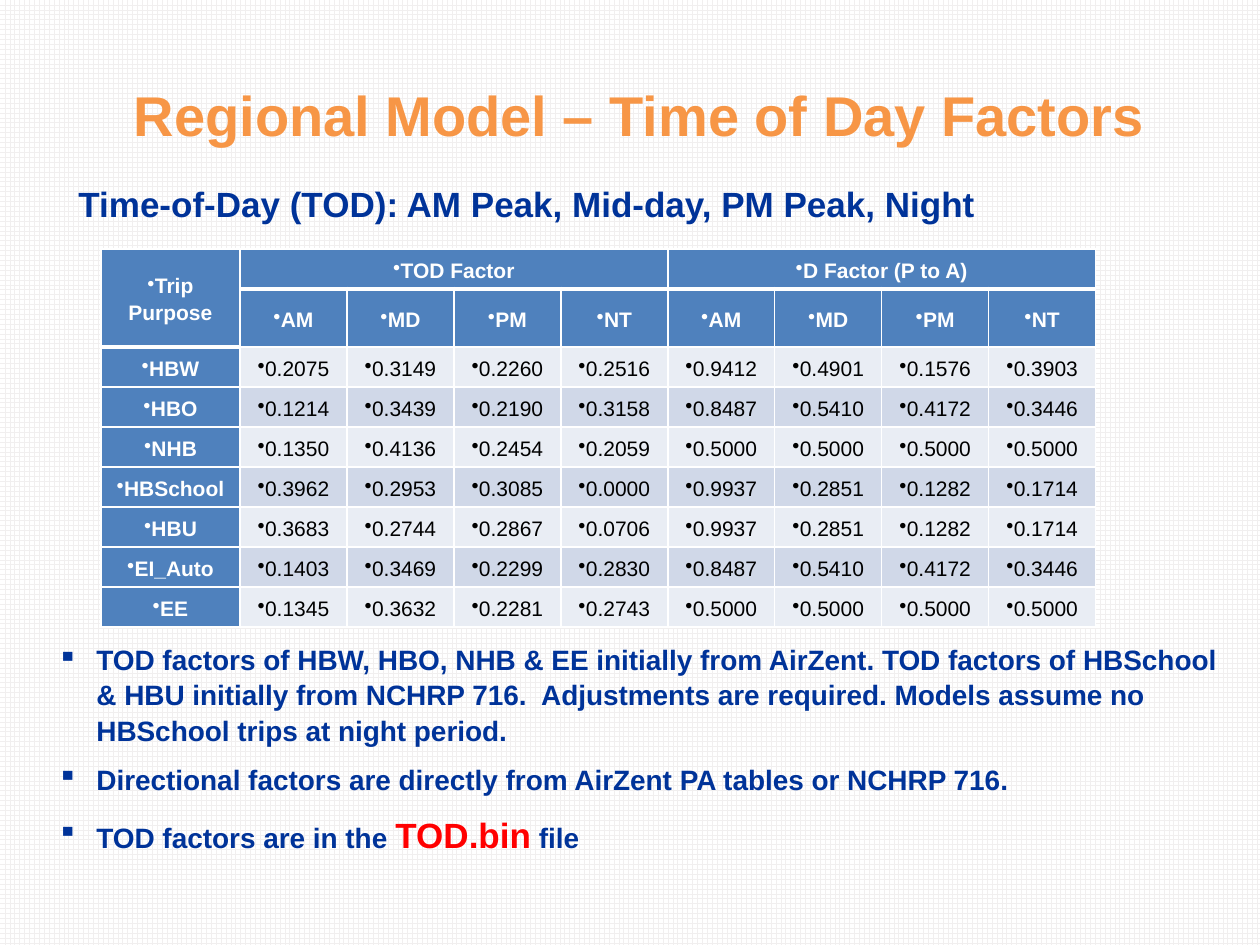
"""Builds the slide of time-of-day factors for the regional model."""
import pptx
import pptx.dml.color
import pptx.enum.dml
import pptx.enum.text
import pptx.oxml
import pptx.oxml.ns
import pptx.util

TITLE = "Regional Model – Time of Day Factors"
PERIODS = "Time-of-Day (TOD): AM Peak, Mid-day, PM Peak, Night"
GROUPS = ["TOD Factor", "D Factor (P to A)"]
TIMES = ["AM", "MD", "PM", "NT"]
FACTORS = [
    ("HBW", "0.2075", "0.3149", "0.2260", "0.2516", "0.9412", "0.4901", "0.1576", "0.3903"),
    ("HBO", "0.1214", "0.3439", "0.2190", "0.3158", "0.8487", "0.5410", "0.4172", "0.3446"),
    ("NHB", "0.1350", "0.4136", "0.2454", "0.2059", "0.5000", "0.5000", "0.5000", "0.5000"),
    ("HBSchool", "0.3962", "0.2953", "0.3085", "0.0000", "0.9937", "0.2851", "0.1282", "0.1714"),
    ("HBU", "0.3683", "0.2744", "0.2867", "0.0706", "0.9937", "0.2851", "0.1282", "0.1714"),
    ("EI_Auto", "0.1403", "0.3469", "0.2299", "0.2830", "0.8487", "0.5410", "0.4172", "0.3446"),
    ("EE", "0.1345", "0.3632", "0.2281", "0.2743", "0.5000", "0.5000", "0.5000", "0.5000"),
]
NOTES = [
    (0, [("TOD factors of HBW, HBO, NHB & EE initially from AirZent. TOD factors of "
          "HBSchool & HBU initially from NCHRP 716.  Adjustments are required. Models "
          "assume no HBSchool trips at night period.", False)]),
    (8, [("Directional factors are directly from AirZent PA tables or NCHRP 716.", False)]),
    (9, [("TOD factors are in the ", False), ("TOD.bin", True), (" file", False)]),
]
COLORS = {"title": "F79646", "body": "003399", "file": "FF0000", "head": "4F81BD",
          "odd": "E9EDF4", "even": "D0D8E8", "white": "FFFFFF", "black": "000000",
          "grid": "F1EFEF"}
FONT = "Arial"
COLS = [139] + [107] * 8
ROWS = [40, 57] + [40] * 7
Pt = pptx.util.Pt


def px(n):
    return round(n * 914400 / 126)


def color(name):
    return pptx.dml.color.RGBColor.from_string(COLORS[name])


def style(font, size, name, bold=True):
    font.name, font.size, font.bold = FONT, Pt(size), bold
    font.color.rgb = color(name)


def bullet(para, char, indent=0):
    props = para._p.get_or_add_pPr()
    props.set("marL", str(px(indent)))
    props.set("indent", str(-px(indent)))
    mark = pptx.oxml.parse_xml(f'<a:buChar {pptx.oxml.ns.nsdecls("a")} char="{char}"/>')
    props.append(mark)


def border(cell, side, width):
    cell._tc.get_or_add_tcPr().append(pptx.oxml.parse_xml(
        f'<a:ln{side} {pptx.oxml.ns.nsdecls("a")} w="{Pt(width)}"><a:solidFill>'
        f'<a:srgbClr val="{COLORS["white"]}"/></a:solidFill></a:ln{side}>'))


def fill_cell(cell, row, col, text):
    head = row < 2 or col == 0
    top = 3 if (row == 1 and col) or (row == 2 and not col) else 1
    base = 3 if row == 0 or (row == 1 and not col) else 1
    for side, width in zip("LRTB", (1, 1, top, base)):
        border(cell, side, width)
    cell.fill.solid()
    cell.fill.fore_color.rgb = color("head" if head else ("odd", "even")[row % 2])
    cell.margin_left = cell.margin_right = px(9)
    cell.margin_top = cell.margin_bottom = 0
    cell.vertical_anchor = pptx.enum.text.MSO_ANCHOR.MIDDLE
    if text:
        para = cell.text_frame.paragraphs[0]
        bullet(para, "•")
        para.alignment = pptx.enum.text.PP_ALIGN.CENTER
        para.line_spacing = 1.15
        style(para.font, 12, "white" if head else "black", head)
        para.add_run().text = text


def add_grid(slide):
    frame = slide.shapes.add_table(len(ROWS), len(COLS), px(101), px(249),
                                   px(sum(COLS)), px(sum(ROWS)))
    table = frame.table
    table.first_row = table.horz_banding = False
    for col, width in zip(table.columns, COLS):
        col.width = px(width)
    for row, height in zip(table.rows, ROWS):
        row.height = px(height)
    step = len(TIMES)
    top = ["Trip Purpose"]
    for group in GROUPS:
        top += [group] + [""] * (step - 1)
    for r, line in enumerate([top, [""] + TIMES * len(GROUPS)] + FACTORS):
        for c, text in enumerate(line):
            fill_cell(table.cell(r, c), r, c, text)
    table.cell(0, 0).merge(table.cell(1, 0))
    for c in range(1, len(COLS), step):
        table.cell(0, c).merge(table.cell(0, c + step - 1))


def add_box(slide, x, y, w, h):
    frame = slide.shapes.add_textbox(px(x), px(y), px(w), px(h)).text_frame
    frame.word_wrap = True
    return frame


def main():
    deck = pptx.Presentation()
    deck.slide_width, deck.slide_height = px(1260), px(945)
    slide = deck.slides.add_slide(deck.slide_layouts[5])
    back = slide.background.fill
    back.patterned()
    back.pattern = pptx.enum.dml.MSO_PATTERN.LARGE_GRID
    back.fore_color.rgb, back.back_color.rgb = color("grid"), color("white")

    title = slide.shapes.title
    title.left, title.top, title.width, title.height = px(118), px(74), px(1043), px(81)
    title.text_frame.text = TITLE
    title.text_frame.word_wrap = False
    title.text_frame.vertical_anchor = pptx.enum.text.MSO_ANCHOR.MIDDLE
    para = title.text_frame.paragraphs[0]
    para.alignment = pptx.enum.text.PP_ALIGN.CENTER
    style(para.font, 32, "title")

    para = add_box(slide, 66, 174, 1200 - 6, 55).paragraphs[0]
    para.line_spacing = 1.05
    style(para.font, 20, "body")
    para.add_run().text = PERIODS

    add_grid(slide)

    notes = add_box(slide, 45, 635, 1191, 229)
    for i, (gap, runs) in enumerate(NOTES):
        para = notes.add_paragraph() if i else notes.paragraphs[0]
        bullet(para, "▪", 39)
        para.line_spacing, para.space_before = 1.05, Pt(gap)
        style(para.font, 16, "body")
        for text, strong in runs:
            run = para.add_run()
            run.text = text
            if strong:
                style(run.font, 20, "file")
    deck.save("out.pptx")


if __name__ == "__main__":
    main()
